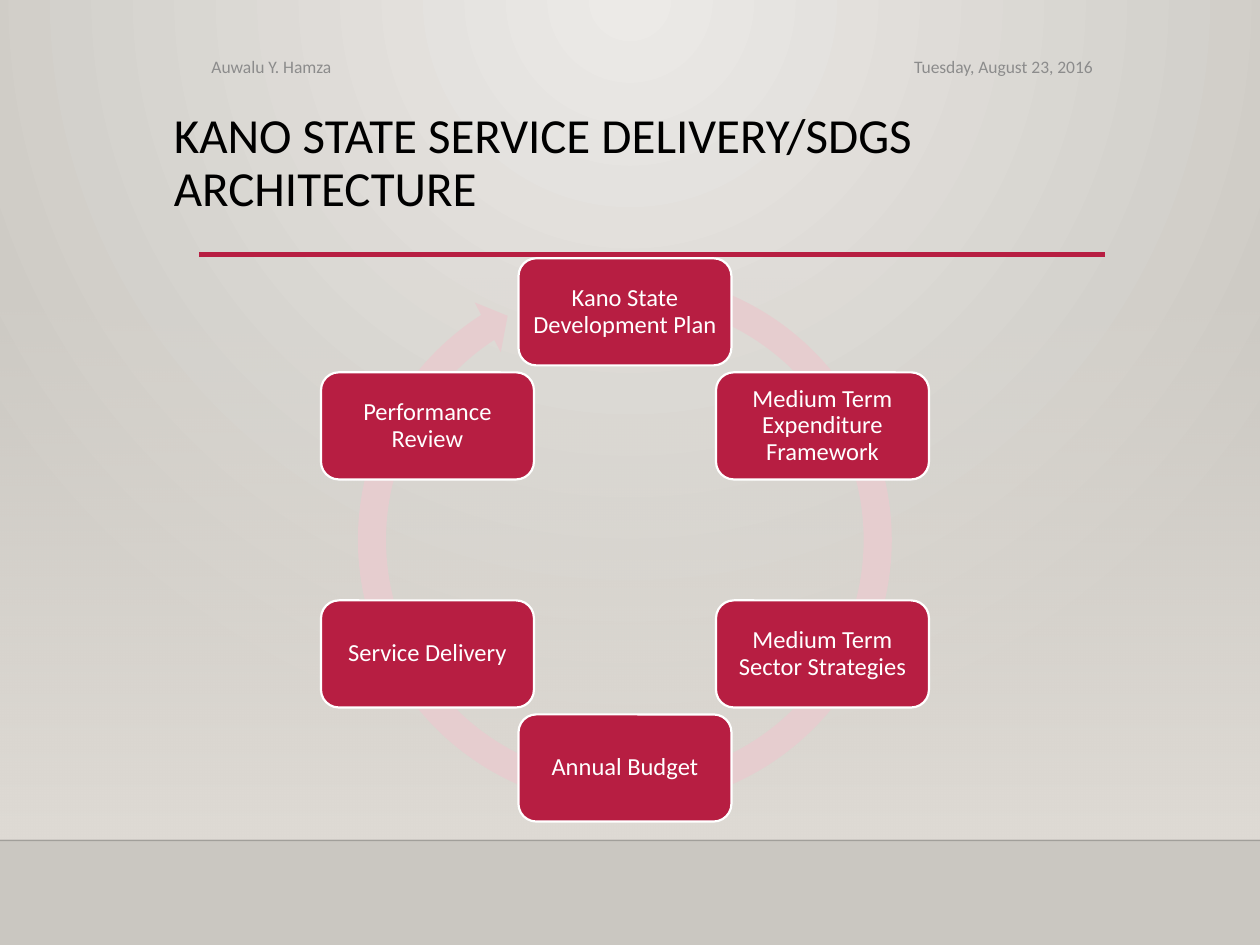
from dataclasses import dataclass
from math import cos, radians, sin

from lxml.etree import SubElement
from pptx import Presentation
from pptx.dml.color import RGBColor
from pptx.enum.shapes import MSO_CONNECTOR, MSO_SHAPE
from pptx.enum.text import MSO_ANCHOR, MSO_AUTO_SIZE, PP_ALIGN
from pptx.oxml import parse_xml
from pptx.oxml.ns import nsdecls, qn
from pptx.util import Inches, Pt

# The slide is a grid of 100 columns by 75 rows of square cells.
COLUMNS, ROWS = 100, 75
CELL = Inches(0.1)
FONT = "Calibri"
COLORS = {
    "accent": "B71E42",
    "ring": "E6CDCF",
    "glow": "ECEAE7",
    "edge": "CAC7C1",
    "wall": "DFDBD5",
    "floor_line": "000001",
    "title": "000000",
    "muted": "8C8C8C",
    "white": "FFFFFF",
}


@dataclass(frozen=True)
class Area:
    column: float
    row: float
    columns: float
    rows: float

    def box(self) -> tuple:
        return tuple(cells(n) for n in (self.column, self.row, self.columns, self.rows))


@dataclass(frozen=True)
class Rule:
    start: float
    end: float
    row: float
    color: str
    weight: float
    opacity: int = 100


@dataclass(frozen=True)
class HeaderText:
    text: str
    area: Area
    align: PP_ALIGN


STEPS = (
    "Kano State Development Plan",
    "Medium Term Expenditure Framework",
    "Medium Term Sector Strategies",
    "Annual Budget",
    "Service Delivery",
    "Performance Review",
)
CENTER_COLUMN, CENTER_ROW, RADIUS = 49.6, 42.85, 18.1
STEP_COLUMNS, STEP_ROWS = 16.9, 8.5
RING_SIZE = 44.6
RING_ADJUSTMENTS = (0.05, 3.13, 142.3, 171.26, 0.05)

TITLE_AREA = Area(12.8, 8.3, 74.4, 10.8)
WALL_AREA = Area(0, 22, COLUMNS, 44.6)
RULES = (
    Rule(0, COLUMNS, 66.7, "floor_line", 1, opacity=20),
    Rule(15.8, 87.7, 20.2, "accent", 2.5),
)
HEADERS = (
    HeaderText("Auwalu Y. Hamza", Area(15.8, 3.6, 44.1, 3.4), PP_ALIGN.LEFT),
    HeaderText("Tuesday, August 23, 2016", Area(61.8, 3.6, 25.9, 3.4), PP_ALIGN.RIGHT),
)


def cells(count: float) -> int:
    return round(count * CELL)


def rgb(name: str) -> RGBColor:
    return RGBColor.from_string(COLORS[name])


def set_gradient(gradient, stops: tuple, direction: str) -> None:
    """Replace a gradFill element; each stop is (position %, colour name, opacity %)."""
    stop_xml = "".join(
        f'<a:gs pos="{position * 1000}"><a:srgbClr val="{COLORS[name]}">'
        f'<a:alpha val="{opacity * 1000}"/></a:srgbClr></a:gs>'
        for position, name, opacity in stops
    )
    gradient.getparent().replace(gradient, parse_xml(
        f'<a:gradFill {nsdecls("a")} rotWithShape="1">'
        f"<a:gsLst>{stop_xml}</a:gsLst>{direction}</a:gradFill>"
    ))


def style_text(paragraph, size: float, color: str, align: PP_ALIGN) -> None:
    paragraph.alignment = align
    paragraph.font.name = FONT
    paragraph.font.size = Pt(size)
    paragraph.font.color.rgb = rgb(color)


def paint_background(slide) -> None:
    slide.background.fill.gradient()
    set_gradient(
        slide.element.xpath(".//p:bgPr/a:gradFill")[0],
        ((0, "glow", 100), (100, "edge", 100)),
        '<a:path path="circle"><a:fillToRect l="43000" t="0" r="43000" b="100000"/></a:path>',
    )
    wall = slide.shapes.add_shape(MSO_SHAPE.RECTANGLE, *WALL_AREA.box())
    wall.shadow.inherit = False
    wall.line.fill.background()
    wall.fill.gradient()
    set_gradient(
        wall.element.xpath("./p:spPr/a:gradFill")[0],
        ((0, "wall", 0), (100, "wall", 100)),
        '<a:lin ang="5400000" scaled="0"/>',
    )


def add_rule(slide, rule: Rule) -> None:
    line = slide.shapes.add_connector(
        MSO_CONNECTOR.STRAIGHT,
        cells(rule.start), cells(rule.row), cells(rule.end), cells(rule.row),
    )
    line.line.color.rgb = rgb(rule.color)
    line.line.width = Pt(rule.weight)
    if rule.opacity < 100:
        color = line.element.xpath(".//a:ln//a:srgbClr")[0]
        SubElement(color, qn("a:alpha")).set("val", str(rule.opacity * 1000))
    SubElement(line.element.spPr, qn("a:effectLst"))


def set_title(slide, text: str) -> None:
    title = slide.shapes.title
    title.left, title.top, title.width, title.height = TITLE_AREA.box()
    frame = title.text_frame
    frame.text = text
    frame.word_wrap = True
    frame.auto_size = MSO_AUTO_SIZE.NONE
    frame.vertical_anchor = MSO_ANCHOR.TOP
    paragraph = frame.paragraphs[0]
    paragraph.line_spacing = 0.9
    style_text(paragraph, 28, "title", PP_ALIGN.LEFT)


def add_header(slide, header: HeaderText) -> None:
    frame = slide.shapes.add_textbox(*header.area.box()).text_frame
    frame.text = header.text
    frame.word_wrap = True
    frame.vertical_anchor = MSO_ANCHOR.MIDDLE
    style_text(frame.paragraphs[0], 10, "muted", header.align)


def add_centered(group, kind: MSO_SHAPE, column: float, row: float,
                 columns: float, rows: float, color: str):
    area = Area(column - columns / 2, row - rows / 2, columns, rows)
    shape = group.shapes.add_shape(kind, *area.box())
    shape.shadow.inherit = False
    shape.fill.solid()
    shape.fill.fore_color.rgb = rgb(color)
    return shape


def add_step(group, text: str, angle: float) -> None:
    """Place a step on the circle, at an angle clockwise from the top."""
    step = add_centered(
        group, MSO_SHAPE.ROUNDED_RECTANGLE,
        CENTER_COLUMN + RADIUS * sin(radians(angle)),
        CENTER_ROW - RADIUS * cos(radians(angle)),
        STEP_COLUMNS, STEP_ROWS, "accent",
    )
    step.line.color.rgb = rgb("white")
    step.line.width = Pt(1.25)
    frame = step.text_frame
    frame.text = text
    frame.word_wrap = True
    frame.vertical_anchor = MSO_ANCHOR.MIDDLE
    frame.margin_left = frame.margin_right = Inches(0.06)
    frame.margin_top = frame.margin_bottom = Inches(0.06)
    paragraph = frame.paragraphs[0]
    paragraph.line_spacing = 0.9
    style_text(paragraph, 14, "white", PP_ALIGN.CENTER)


def add_cycle(slide) -> None:
    group = slide.shapes.add_group_shape()
    ring = add_centered(group, MSO_SHAPE.CIRCULAR_ARROW, CENTER_COLUMN, CENTER_ROW,
                        RING_SIZE, RING_SIZE, "ring")
    ring.line.fill.background()
    for index, value in enumerate(RING_ADJUSTMENTS):
        ring.adjustments[index] = value
    for index, text in enumerate(STEPS):
        add_step(group, text, index * 360 / len(STEPS))


def main() -> None:
    presentation = Presentation()
    presentation.slide_width, presentation.slide_height = cells(COLUMNS), cells(ROWS)
    slide = presentation.slides.add_slide(presentation.slide_layouts[5])
    paint_background(slide)
    for rule in RULES:
        add_rule(slide, rule)
    set_title(slide, "KANO STATE SERVICE DELIVERY/SDGS ARCHITECTURE")
    add_cycle(slide)
    for header in HEADERS:
        add_header(slide, header)
    presentation.save("out.pptx")


if __name__ == "__main__":
    main()
